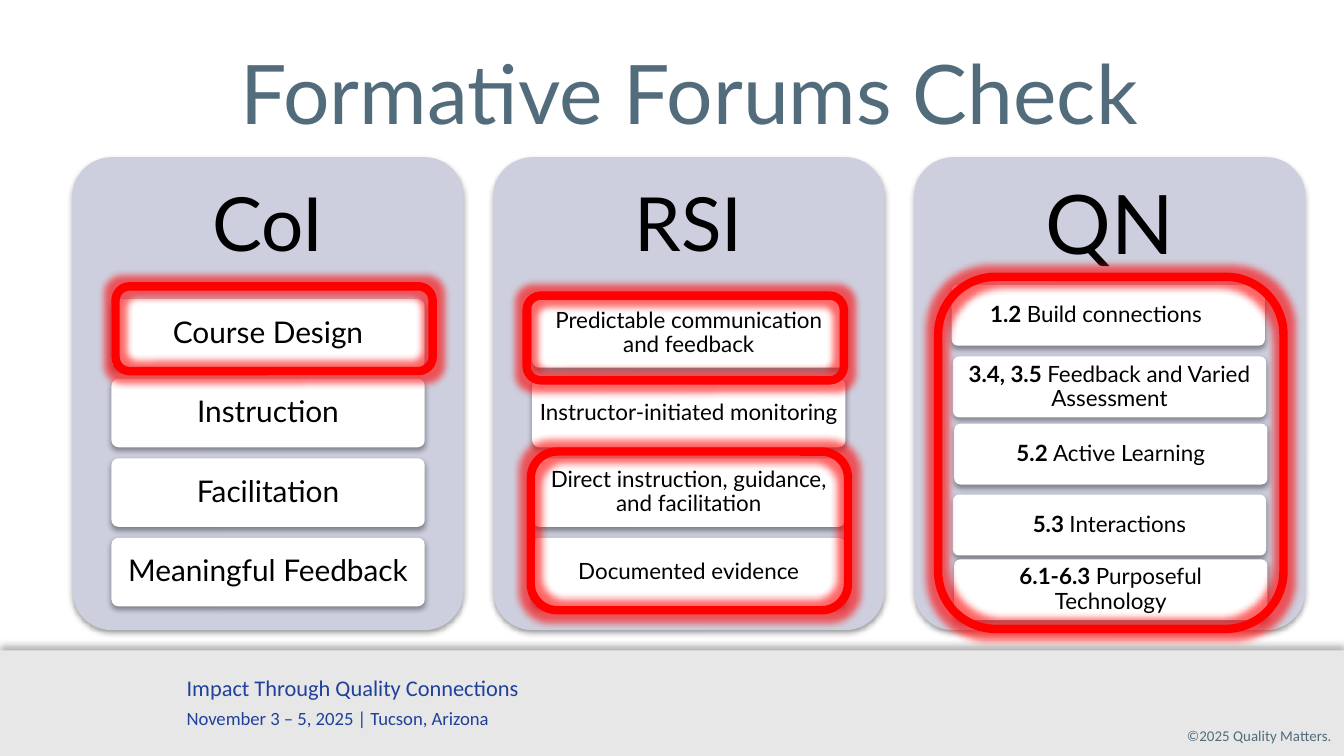
from lxml.etree import SubElement
from pptx import Presentation
from pptx.dml.color import RGBColor
from pptx.enum.shapes import MSO_SHAPE as Shape
from pptx.enum.text import MSO_ANCHOR as Anchor, PP_ALIGN as Align
from pptx.oxml.ns import qn
from pptx.util import Pt

COLORS = {
    "slate": "526C7C", "blue": "1F419A", "panel": "CDCFDE", "white": "FFFFFF",
    "footer": "E7E7E7", "black": "000000", "red": "FF0000",
}

# Content: each item is (bold lead, text)
TITLE = "Formative Forums Check"
COLUMNS = [
    {"head": "CoI", "head_size": 40, "size": 16, "items": [
        ("", "Course Design"), ("", "Instruction"),
        ("", "Facilitation"), ("", "Meaningful Feedback")]},
    {"head": "RSI", "head_size": 40, "size": 12, "items": [
        ("", "Predictable communication and feedback"),
        ("", "Instructor-initiated monitoring"),
        ("", "Direct instruction, guidance, and facilitation"),
        ("", "Documented evidence")]},
    {"head": "QN", "head_size": 44, "size": 12, "items": [
        ("1.2 ", "Build connections"),
        ("3.4, 3.5 ", "Feedback and Varied Assessment"),
        ("5.2 ", "Active Learning"), ("5.3 ", "Interactions"),
        ("6.1-6.3 ", "Purposeful Technology")]},
]
FOOTER = [("Impact Through Quality Connections", 12),
          ("November 3 – 5, 2025 | Tucson, Arizona", 10)]
COPYRIGHT = "©2025 Quality Matters."

# Layout in points
PANEL_LEFT, PANEL_TOP, PANEL_WIDTH, PANEL_HEIGHT = 38.9, 84.2, 209.5, 253.4
PANEL_PITCH = 225.4
HEAD_HEIGHT = 75.6
ITEM_WIDTH = 167.8
ITEM_TOP, ITEM_HEIGHT, ITEM_PITCH = 160.3, 36.7, 42.6
# The last column is denser and placed by hand: (left, top)
DENSE_HEIGHT = 32.6
DENSE_SPOTS = [(509.8, 152.6), (510.5, 191), (511.2, 227), (510.5, 265), (511.2, 299.7)]
FRAMES = [(61.9, 153.4, 169.9, 45.4), (284.4, 241.9, 169.9, 85),
          (282.2, 158.4, 169.9, 45.4), (502.6, 148.3, 185, 188.6)]


def add_effect(shape, kind, color, alpha, **settings):
    shape.shadow.inherit = False
    effects = shape._element.spPr.find(qn("a:effectLst"))
    effect = SubElement(effects, qn("a:" + kind),
                        {name: str(value) for name, value in settings.items()})
    tint = SubElement(effect, qn("a:srgbClr"), val=COLORS[color])
    SubElement(tint, qn("a:alpha"), val=str(alpha * 1000))


def add_shadow(shape, alpha=38, blur=3.1, distance=1.6, angle=90):
    add_effect(shape, "outerShdw", "black", alpha, blurRad=int(Pt(blur)),
               dist=int(Pt(distance)), dir=angle * 60000, rotWithShape=0)


def add_block(page, kind, bounds, color, rounding=None):
    shape = page.shapes.add_shape(kind, *map(Pt, bounds))
    if rounding is not None:
        shape.adjustments[0] = rounding
    shape.fill.solid()
    shape.fill.fore_color.rgb = RGBColor.from_string(COLORS[color])
    shape.line.fill.background()
    return shape


def write(box, paragraphs, *, color="black", font="Lato", align=Align.CENTER,
          anchor=Anchor.MIDDLE, insets=(3, 2, 3, 2), spacing=None, gap=0):
    """Each paragraph is a list of (text, size, bold) spans."""
    frame = box.text_frame
    frame.word_wrap = True
    frame.vertical_anchor = anchor
    (frame.margin_left, frame.margin_top,
     frame.margin_right, frame.margin_bottom) = map(Pt, insets)
    for index, spans in enumerate(paragraphs):
        para = frame.add_paragraph() if index else frame.paragraphs[0]
        para.alignment = align
        if spacing:
            para.line_spacing = spacing
        if index and gap:
            para.space_before = Pt(gap)
        for text, size, bold in spans:
            span = para.add_run()
            span.text = text
            span.font.name, span.font.size, span.font.bold = font, Pt(size), bold
            span.font.color.rgb = RGBColor.from_string(COLORS[color])


deck = Presentation()
deck.slide_width, deck.slide_height = Pt(720), Pt(405)
page = deck.slides.add_slide(deck.slide_layouts[6])


def add_text(bounds, paragraphs, **style):
    write(page.shapes.add_textbox(*map(Pt, bounds)), paragraphs, **style)


# Footer band
band = add_block(page, Shape.RECTANGLE, (0, 348.5, 720, 56.5), "footer")
add_shadow(band, alpha=30, blur=4, distance=3, angle=270)
add_text((599, 385.9, 114.5, 17.3), [[(COPYRIGHT, 8, False)]], color="slate",
         font="Calibri", align=Align.RIGHT, anchor=Anchor.TOP, insets=(7.2, 3.6, 0, 3.6))
add_text((92.9, 357.8, 460, 36.7), [[(text, size, False)] for text, size in FOOTER],
         color="blue", font="Calibri", align=Align.LEFT, anchor=Anchor.TOP,
         insets=(7.2, 3.6, 7.2, 3.6), gap=3)

# Title
add_text((38.9, 20.9, 661, 56.9), [[(TITLE, 44, False)]], color="slate",
         insets=(7.2, 3.6, 7.2, 3.6))

# Columns
for number, column in enumerate(COLUMNS):
    left = PANEL_LEFT + number * PANEL_PITCH
    panel = add_block(page, Shape.ROUNDED_RECTANGLE,
                      (left, PANEL_TOP, PANEL_WIDTH, PANEL_HEIGHT), "panel", 0.1)
    add_shadow(panel)
    add_text((left, PANEL_TOP, PANEL_WIDTH, HEAD_HEIGHT),
             [[(column["head"], column["head_size"], False)]],
             insets=(12.5,) * 4, spacing=0.9)
    dense = len(column["items"]) == len(DENSE_SPOTS)
    for row, (lead, text) in enumerate(column["items"]):
        if dense:
            spot, height = DENSE_SPOTS[row], DENSE_HEIGHT
        else:
            spot = (left + (PANEL_WIDTH - ITEM_WIDTH) / 2, ITEM_TOP + row * ITEM_PITCH)
            height = ITEM_HEIGHT
        card = add_block(page, Shape.ROUNDED_RECTANGLE,
                         (*spot, ITEM_WIDTH, height), "white", 0.1)
        add_shadow(card)
        spans = [(lead, column["size"], True)] if lead else []
        right = 16 if dense and row == 0 else 3  # first dense item sits left of centre
        write(card, [spans + [(text, column["size"], False)]],
              insets=(3, 2, right, 2), spacing=0.9)

# Glowing highlight frames
for bounds in FRAMES:
    frame = page.shapes.add_shape(Shape.ROUNDED_RECTANGLE, *map(Pt, bounds))
    frame.fill.background()
    frame.line.color.rgb = RGBColor.from_string(COLORS["red"])
    frame.line.width = Pt(4.5)
    add_effect(frame, "glow", "red", 60, rad=int(Pt(8)))

deck.save("out.pptx")
